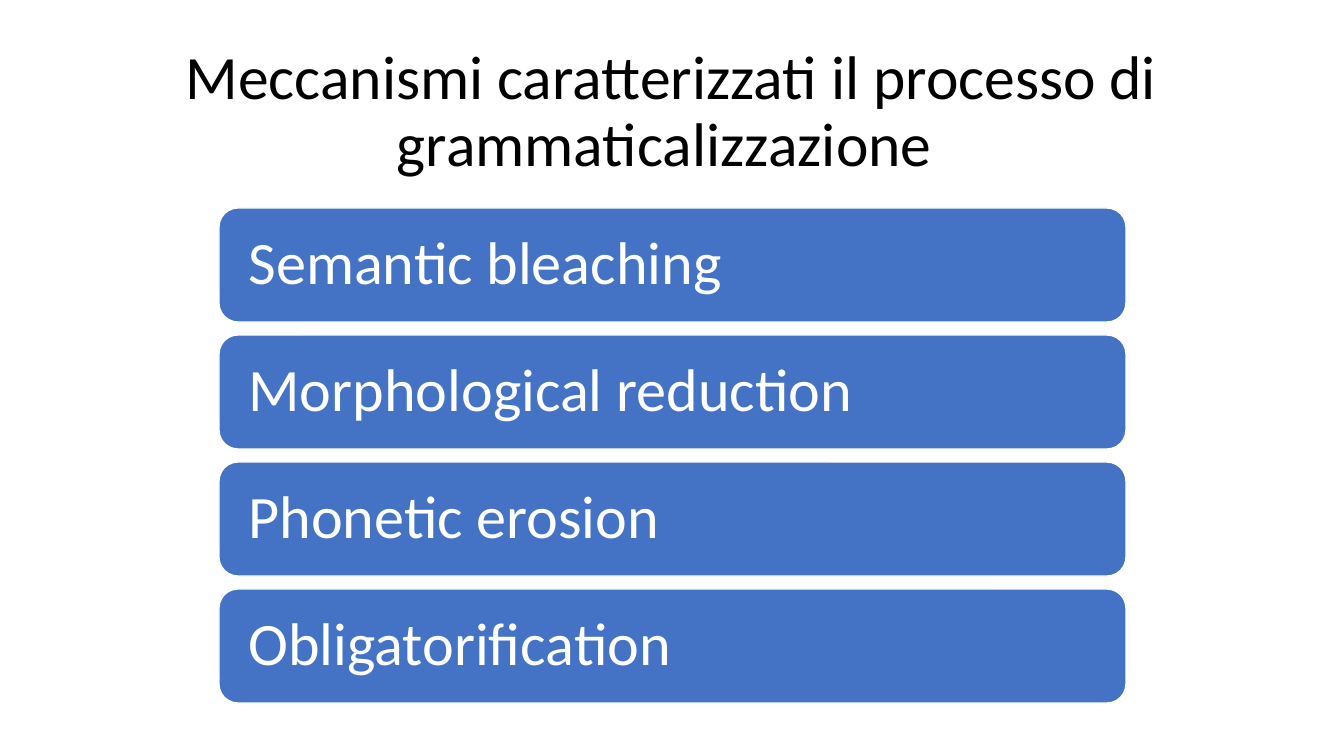
from pptx import Presentation
from pptx.dml.color import RGBColor
from pptx.enum.shapes import MSO_SHAPE
from pptx.enum.text import MSO_ANCHOR, PP_ALIGN
from pptx.util import Pt

# Content
TITLE = "Meccanismi caratterizzati il processo di grammaticalizzazione "
STEPS = ["Semantic bleaching", "Morphological reduction",
         "Phonetic erosion", "Obligatorification"]

# Look
BLACK = RGBColor(0x00, 0x00, 0x00)
WHITE = RGBColor(0xFF, 0xFF, 0xFF)
BLUE = RGBColor(0x44, 0x72, 0xC4)
HEAD = {"name": "Calibri", "size": Pt(44)}
BODY = {"name": "Calibri", "size": Pt(43)}

# Layout in px
SCALE = 914400 / 100.8
LEFT, TOP, WIDE, HIGH, STEP = 219, 208, 907, 114, 127
INSET = 24


def px(*vals):
    return [round(v * SCALE) for v in vals]


def write(shape, text, style, color, align, pad):
    frame = shape.text_frame
    side, edge = px(*pad)
    form = {"word_wrap": True, "vertical_anchor": MSO_ANCHOR.MIDDLE,
            "margin_left": side, "margin_right": side,
            "margin_top": edge, "margin_bottom": edge}
    for key, val in form.items():
        setattr(frame, key, val)
    para = frame.paragraphs[0]
    para.alignment = align
    para.line_spacing = 0.9
    run = para.add_run()
    run.text = text
    for key, val in style.items():
        setattr(run.font, key, val)
    run.font.color.rgb = color


deck = Presentation()
deck.slide_width, deck.slide_height = px(1344, 756)
slide = deck.slides.add_slide(deck.slide_layouts[6])

# Title
title = slide.shapes.add_textbox(*px(92, 40, 1159, 146))
write(title, TITLE, HEAD, BLACK, PP_ALIGN.CENTER, (10, 5))

# Stacked bars
for i, text in enumerate(STEPS):
    bar = slide.shapes.add_shape(MSO_SHAPE.ROUNDED_RECTANGLE,
                                 *px(LEFT, TOP + i * STEP, WIDE, HIGH))
    bar.shadow.inherit = False
    bar.fill.solid()
    bar.fill.fore_color.rgb = BLUE
    bar.line.color.rgb = WHITE
    bar.line.width = Pt(1)
    write(bar, text, BODY, WHITE, PP_ALIGN.LEFT, (INSET, INSET))

deck.save("out.pptx")
